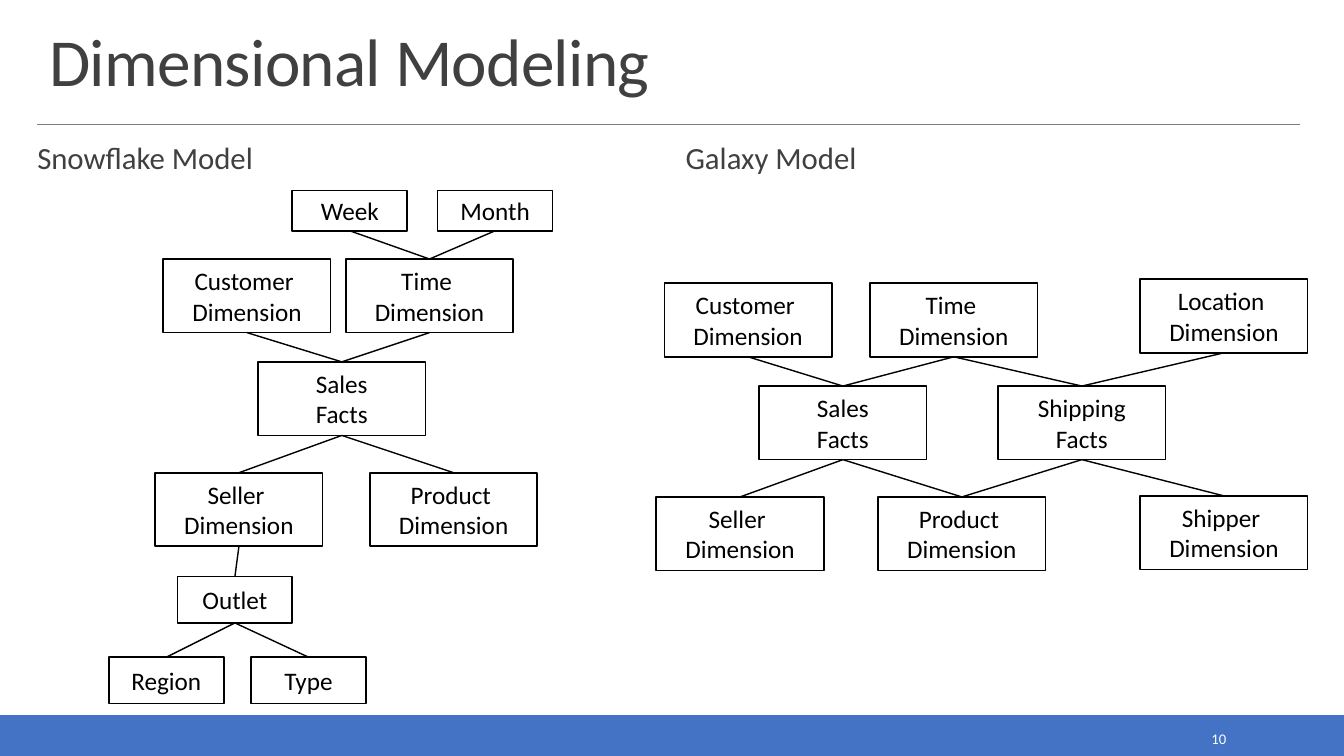
from pptx import Presentation
from pptx.dml.color import RGBColor
from pptx.enum import shapes, text
from pptx.oxml import ns, xmlchemy
from pptx.util import Inches, Pt

BLACK = RGBColor(0x00, 0x00, 0x00)
WHITE = RGBColor(0xFF, 0xFF, 0xFF)
CHARCOAL = RGBColor(0x40, 0x40, 0x40)
GREY = RGBColor(0x80, 0x80, 0x80)
BLUE = RGBColor(0x44, 0x72, 0xC4)
FONT = "Calibri"
WIDE, TALL = 1.66, 0.73
SMALL = 1.14

SNOWFLAKE_BOXES = {
    "sales": ("Sales\nFacts", 2.56, 3.59, WIDE, TALL),
    "customer": ("Customer \nDimension", 1.62, 2.57, WIDE, TALL),
    "time": ("Time \nDimension", 3.43, 2.57, WIDE, TALL),
    "seller": ("Seller \nDimension", 1.54, 4.69, WIDE, TALL),
    "product": ("Product \nDimension", 3.67, 4.69, WIDE, TALL),
    "week": ("Week", 2.9, 1.89, SMALL, 0.4),
    "month": ("Month", 4.34, 1.89, SMALL, 0.4),
    "outlet": ("Outlet", 1.76, 5.72, SMALL, 0.46),
    "region": ("Region", 1.08, 6.52, SMALL, 0.46),
    "type": ("Type", 2.49, 6.52, SMALL, 0.46),
}
SNOWFLAKE_LINKS = [
    ("week", "time"), ("month", "time"), ("customer", "sales"),
    ("time", "sales"), ("sales", "seller"), ("sales", "product"),
    ("seller", "outlet"), ("outlet", "region"), ("outlet", "type"),
]
GALAXY_BOXES = {
    "sales": ("Sales\nFacts", 7.53, 3.83, WIDE, TALL),
    "shipping": ("Shipping\nFacts", 9.9, 3.83, WIDE, TALL),
    "customer": ("Customer \nDimension", 6.59, 2.81, WIDE, TALL),
    "time": ("Time \nDimension", 8.63, 2.81, WIDE, TALL),
    "location": ("Location \nDimension", 11.31, 2.77, WIDE, TALL),
    "seller": ("Seller \nDimension", 6.51, 4.93, WIDE, TALL),
    "product": ("Product \nDimension", 8.71, 4.93, WIDE, TALL),
    "shipper": ("Shipper \nDimension", 11.31, 4.92, WIDE, TALL),
}
GALAXY_LINKS = [
    ("customer", "sales"), ("time", "sales"), ("time", "shipping"),
    ("location", "shipping"), ("sales", "seller"), ("sales", "product"),
    ("shipping", "product"), ("shipping", "shipper"),
]


def write(paragraph, words, size, color):
    """Add words to a paragraph, one run per line, and return the last run."""
    for index, line in enumerate(words.split("\n")):
        if index:
            paragraph.add_line_break()
        run = paragraph.add_run()
        run.text = line
        run.font.name = FONT
        run.font.size = Pt(size)
        run.font.color.rgb = color
    return run


def add_label(slide, place, words, size, color, anchor=text.MSO_ANCHOR.TOP):
    """Add a wrapped text box and return its frame and run."""
    frame = slide.shapes.add_textbox(*map(Inches, place)).text_frame
    frame.word_wrap = True
    frame.vertical_anchor = anchor
    return frame, write(frame.paragraphs[0], words, size, color)


def add_heading(slide, left, width, words):
    """Add the heading of one model."""
    frame, _ = add_label(slide, (left, 1.38, width, 0.4), words, 22, CHARCOAL)
    frame.margin_left = frame.margin_right = 0
    frame.margin_top = frame.margin_bottom = Inches(0.04)
    paragraph = frame.paragraphs[0]
    paragraph.line_spacing = 0.9
    paragraph.space_before, paragraph.space_after = Pt(12), Pt(2)


def add_rectangle(slide, place, line_color):
    """Add an unfilled rectangle without a shadow."""
    rectangle = slide.shapes.add_shape(
        shapes.MSO_SHAPE.RECTANGLE, *map(Inches, place))
    rectangle.shadow.inherit = False
    rectangle.fill.background()
    rectangle.line.color.rgb = line_color
    rectangle.line.width = Pt(1.25)
    return rectangle


def add_entity(slide, words, *place):
    """Add a black-edged box with centred text."""
    entity = add_rectangle(slide, place, BLACK)
    frame = entity.text_frame
    frame.word_wrap = True
    frame.vertical_anchor = text.MSO_ANCHOR.MIDDLE
    frame.paragraphs[0].alignment = text.PP_ALIGN.CENTER
    write(frame.paragraphs[0], words, 18, BLACK)
    return entity


def add_line(slide, start, end, color, width):
    """Add a straight line without a shadow."""
    line = slide.shapes.add_connector(
        shapes.MSO_CONNECTOR.STRAIGHT, *map(Inches, start + end))
    line.line.color.rgb = color
    line.line.width = Pt(width)
    line._element.spPr.append(xmlchemy.OxmlElement("a:effectLst"))
    return line


def add_link(slide, upper, lower):
    """Join the bottom of one entity to the top of another."""
    link = add_line(slide, (0, 0), (0, 0), BLACK, 1)
    link.begin_connect(upper, 2)
    link.end_connect(lower, 0)
    return link


def add_model(slide, boxes, links):
    """Draw the entities and links of one model as a group."""
    entities = {key: add_entity(slide, *box) for key, box in boxes.items()}
    joins = [add_link(slide, entities[a], entities[b]) for a, b in links]
    slide.shapes.add_group_shape([*entities.values(), *joins])


def add_frame(slide):
    """Add the title, its rule, the footer band and the page number."""
    band = add_rectangle(slide, (0, 7.1, 13.33, 0.4), BLUE)
    band.fill.solid()
    band.fill.fore_color.rgb = BLUE
    add_line(slide, (0.37, 1.23), (12.89, 1.23), GREY, 0.5)
    title, run = add_label(slide, (0.39, 0.2, 12.52, 0.84),
                           "Dimensional Modeling", 48, CHARCOAL,
                           text.MSO_ANCHOR.BOTTOM)
    title.paragraphs[0].line_spacing = 0.85
    run._r.get_or_add_rPr().set("spc", "-50")
    page, _ = add_label(slide, (10.83, 7.19, 1.43, 0.28), "10", 10.5, WHITE,
                        text.MSO_ANCHOR.MIDDLE)
    page.paragraphs[0].alignment = text.PP_ALIGN.RIGHT


def main():
    """Build the slide and save it."""
    deck = Presentation()
    deck.slide_width, deck.slide_height = Inches(13.33), Inches(7.5)
    slide = deck.slides.add_slide(deck.slide_layouts[6])
    add_frame(slide)
    add_heading(slide, 0.37, 6.23, "Snowflake Model")
    add_heading(slide, 6.8, 6.09, "Galaxy Model")
    add_model(slide, SNOWFLAKE_BOXES, SNOWFLAKE_LINKS)
    add_model(slide, GALAXY_BOXES, GALAXY_LINKS)
    deck.save("out.pptx")


if __name__ == "__main__":
    main()
